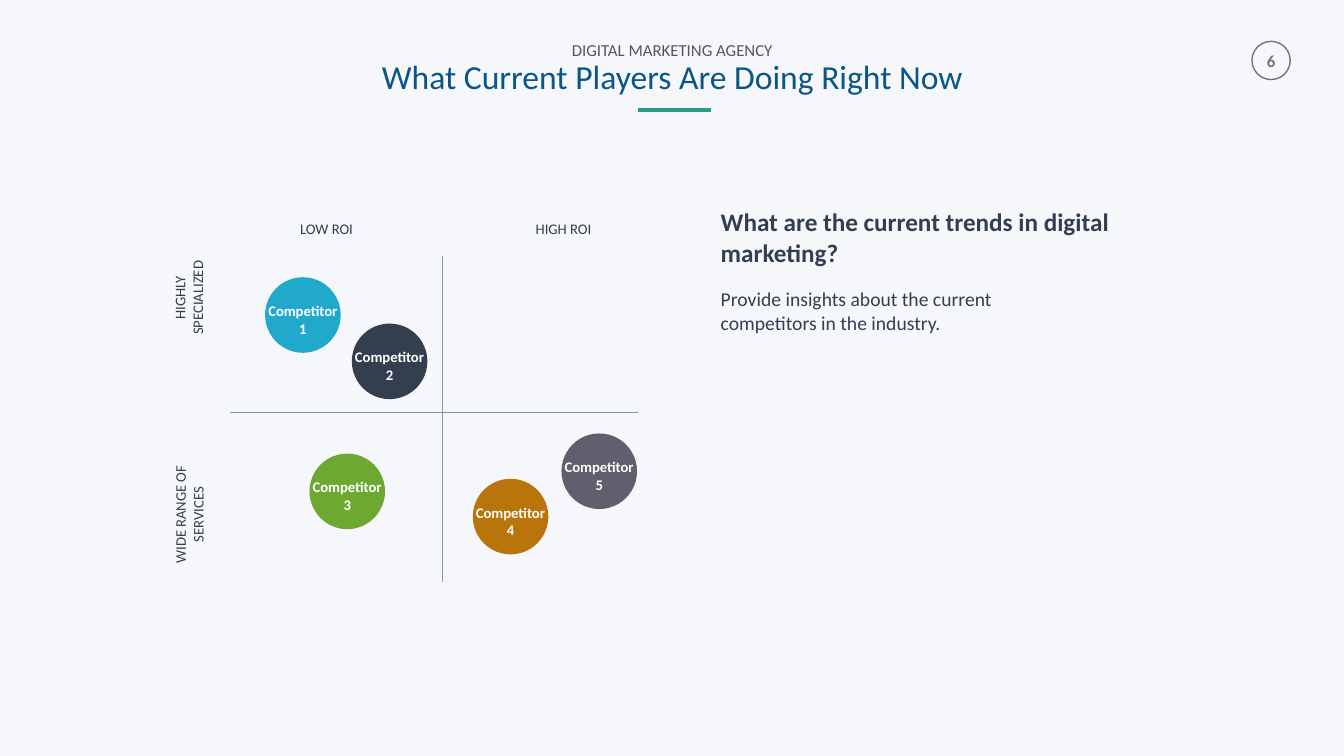
"""Build a competitor positioning slide on a grid of 160 columns by 90 rows."""
import dataclasses
import typing

import lxml.etree
import pptx
import pptx.dml.color
import pptx.enum.shapes
import pptx.enum.text
import pptx.oxml.ns
import pptx.util

RGBColor = pptx.dml.color.RGBColor
Align = pptx.enum.text.PP_ALIGN
ShapeType = pptx.enum.shapes.MSO_SHAPE

COLUMNS, ROWS = 160, 90
CELL = pptx.util.Inches(7.5) / ROWS

BACKGROUND = RGBColor(0xF6, 0xF7, 0xFA)
NUMBER_GRAY = RGBColor(0x73, 0x75, 0x72)
KICKER_GRAY = RGBColor(0x56, 0x58, 0x56)
TITLE_BLUE = RGBColor(0x0A, 0x56, 0x86)
ACCENT_GREEN = RGBColor(0x24, 0x9F, 0x83)
AXIS_BLUE = RGBColor(0x84, 0x97, 0xB0)
TEXT_NAVY = RGBColor(0x33, 0x3F, 0x4F)
WHITE = RGBColor(0xFF, 0xFF, 0xFF)
CYAN = RGBColor(0x20, 0xA9, 0xCA)
SLATE = RGBColor(0x33, 0x3F, 0x4E)
GREEN = RGBColor(0x6D, 0xA9, 0x31)
ORANGE = RGBColor(0xB9, 0x74, 0x0B)
PURPLE = RGBColor(0x61, 0x5F, 0x6D)

CIRCLE_SIZE = 9
FRAME_FORMAT = {
    "auto_size": pptx.enum.text.MSO_AUTO_SIZE.NONE,
    "vertical_anchor": pptx.enum.text.MSO_ANCHOR.TOP,
}


@dataclasses.dataclass(frozen=True)
class Box:
    """An area in grid columns and rows."""
    column: float
    row: float
    columns: float
    rows: float

    def lengths(self) -> list[int]:
        """Return left, top, width and height."""
        return [cells(value) for value in dataclasses.astuple(self)]


@dataclasses.dataclass(frozen=True)
class Line:
    """One paragraph and its format."""
    text: str
    size: float
    color: RGBColor = TEXT_NAVY
    bold: bool = False
    align: Align = Align.CENTER
    spacing: float = 1.0


@dataclasses.dataclass(frozen=True)
class AxisLabel:
    """A caption beside the quadrant axes."""
    text: str
    box: Box
    rotation: float = 0


@dataclasses.dataclass(frozen=True)
class Competitor:
    """A circle on the quadrant chart."""
    number: int
    column: float
    row: float
    color: RGBColor


AXIS_LABELS = [
    AxisLabel("LOW ROI", Box(30.84, 25.56, 16.08, 3.36)),
    AxisLabel("HIGH ROI", Box(58.56, 25.56, 17.04, 3.36)),
    AxisLabel("HIGHLY SPECIALIZED", Box(14.4, 32.76, 16.08, 5.4), 270),
    AxisLabel("WIDE RANGE OF SERVICES", Box(13.2, 58.56, 18.6, 5.4), 270),
]
COMPETITORS = [
    Competitor(1, 31.56, 33, CYAN),
    Competitor(2, 41.88, 38.52, SLATE),
    Competitor(3, 36.84, 54, GREEN),
    Competitor(4, 56.28, 57, ORANGE),
    Competitor(5, 66.84, 51.6, PURPLE),
]


def cells(count: float) -> int:
    """Convert grid cells to a length."""
    return round(count * CELL)


def apply_format(target: typing.Any, values: dict[str, typing.Any]) -> None:
    """Set each named attribute."""
    for name, value in values.items():
        setattr(target, name, value)


def write(shape: typing.Any, lines: list[Line], wrap: bool = True) -> None:
    """Fill a shape with formatted paragraphs."""
    frame = shape.text_frame
    apply_format(frame, FRAME_FORMAT | {"word_wrap": wrap})
    frame.text = "\n".join(line.text for line in lines)
    for paragraph, line in zip(frame.paragraphs, lines):
        apply_format(paragraph, {
            "alignment": line.align,
            "line_spacing": line.spacing,
            "space_before": pptx.util.Pt(0),
        })
        font = paragraph.runs[0].font
        apply_format(font, {
            "name": "Calibri",
            "size": pptx.util.Pt(line.size),
            "bold": line.bold,
        })
        font.color.rgb = line.color


def place(shape: typing.Any, box: Box) -> None:
    """Move a placeholder to a grid area."""
    apply_format(shape, dict(zip(("left", "top", "width", "height"), box.lengths())))


def draw_line(shapes: typing.Any, start: tuple[float, float], end: tuple[float, float],
              color: RGBColor, width: float) -> None:
    """Draw a straight line between two grid points."""
    points = [cells(value) for value in start + end]
    connector = shapes.add_connector(pptx.enum.shapes.MSO_CONNECTOR.STRAIGHT, *points)
    connector.line.color.rgb = color
    connector.line.width = pptx.util.Pt(width)
    lxml.etree.SubElement(connector._element.spPr, pptx.oxml.ns.qn("a:effectLst"))


def draw_circle(shapes: typing.Any, box: Box) -> typing.Any:
    """Draw an ellipse without a shadow."""
    circle = shapes.add_shape(ShapeType.OVAL, *box.lengths())
    circle.shadow.inherit = False
    return circle


def draw_competitor(slide: typing.Any, competitor: Competitor) -> None:
    """Draw a competitor circle with its label."""
    shapes = slide.shapes.add_group_shape().shapes
    column, row = competitor.column, competitor.row
    circle = draw_circle(shapes, Box(column, row, CIRCLE_SIZE, CIRCLE_SIZE))
    circle.fill.solid()
    circle.fill.fore_color.rgb = competitor.color
    circle.line.fill.background()
    label = shapes.add_textbox(*Box(column - 1.08, row + 2.34, 11.16, 5.4).lengths())
    texts = ("Competitor", str(competitor.number))
    write(label, [Line(text, 10.5, WHITE, True) for text in texts], wrap=False)


def draw_number(slide: typing.Any) -> None:
    """Draw the circled slide number."""
    circle = draw_circle(slide.shapes, Box(149.04, 4.92, 4.56, 4.56))
    circle.fill.background()
    circle.line.color.rgb = NUMBER_GRAY
    circle.line.width = pptx.util.Pt(1)
    write(circle, [Line("6", 12, NUMBER_GRAY, True)], wrap=False)
    circle.text_frame.vertical_anchor = pptx.enum.text.MSO_ANCHOR.MIDDLE


def fill_placeholders(slide: typing.Any) -> None:
    """Fill the title and body texts and remove unused placeholders."""
    title, heading, left_content, body, right_content = slide.placeholders
    place(title, Box(44.16, 4.44, 71.76, 7.8))
    write(title, [
        Line("DIGITAL MARKETING AGENCY", 12, KICKER_GRAY, spacing=0.9),
        Line("What Current Players Are Doing Right Now", 24, TITLE_BLUE, spacing=0.9),
    ], wrap=False)
    place(heading, Box(84.6, 24, 52.8, 8.52))
    write(heading, [Line("What are the current trends in digital marketing?", 18,
                         bold=True, align=Align.LEFT)])
    place(body, Box(84.6, 33.6, 44.28, 6.84))
    write(body, [Line("Provide insights about the current competitors in the industry.", 14,
                      align=Align.LEFT)])
    for unused in (left_content, right_content):
        unused.element.getparent().remove(unused.element)


def main() -> None:
    """Build and save the presentation."""
    presentation = pptx.Presentation()
    presentation.slide_width = cells(COLUMNS)
    presentation.slide_height = cells(ROWS)
    slide = presentation.slides.add_slide(presentation.slide_layouts.get_by_name("Comparison"))
    slide.background.fill.solid()
    slide.background.fill.fore_color.rgb = BACKGROUND
    fill_placeholders(slide)
    draw_number(slide)
    draw_line(slide.shapes, (84.6, 13.08), (75.96, 13.08), ACCENT_GREEN, 3)
    axes = slide.shapes.add_group_shape().shapes
    draw_line(axes, (52.68, 30.48), (52.68, 69.24), AXIS_BLUE, 0.5)
    draw_line(axes, (27.36, 49.08), (75.96, 49.08), AXIS_BLUE, 0.5)
    for label in AXIS_LABELS:
        textbox = slide.shapes.add_textbox(*label.box.lengths())
        textbox.rotation = label.rotation
        write(textbox, [Line(label.text, 10.5)])
    for competitor in COMPETITORS:
        draw_competitor(slide, competitor)
    presentation.save("out.pptx")


if __name__ == "__main__":
    main()
